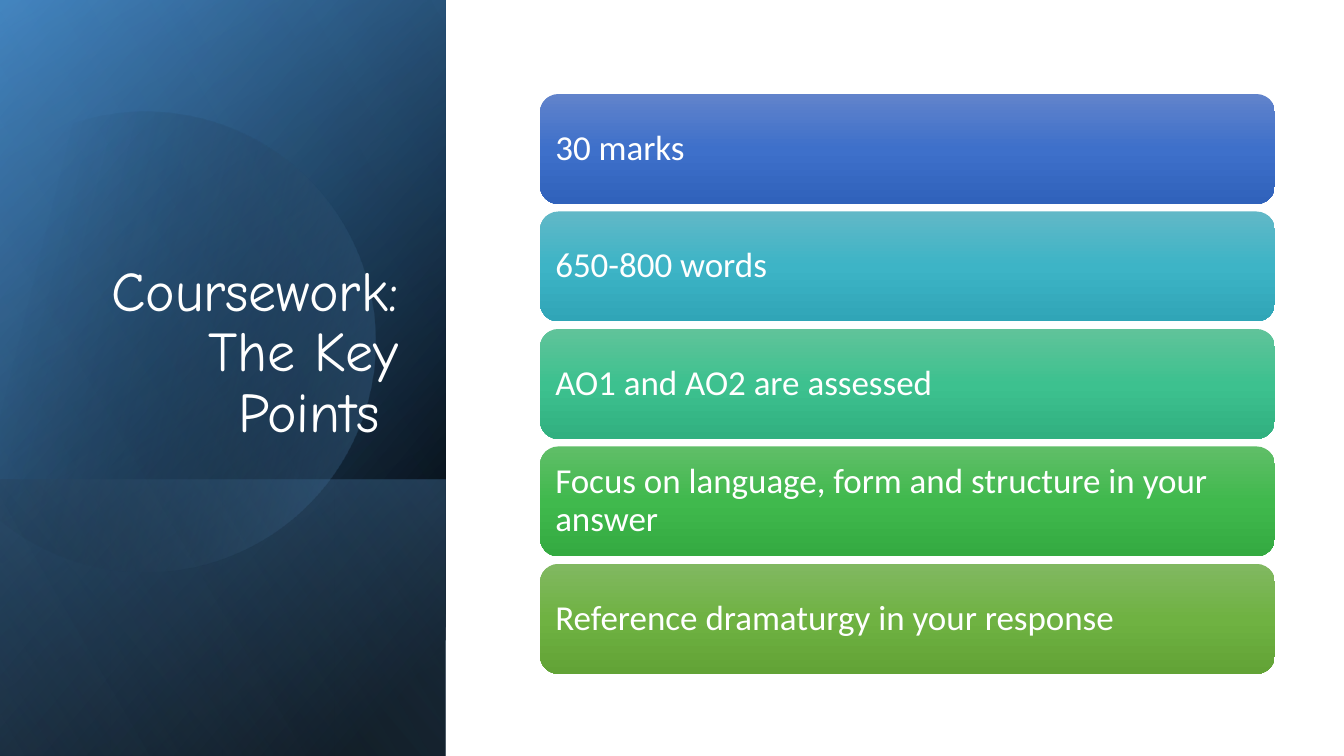
from dataclasses import dataclass
from math import cos, radians, sin

from lxml import etree
from pptx import Presentation
from pptx.dml.color import RGBColor
from pptx.enum.shapes import MSO_SHAPE
from pptx.enum.text import MSO_ANCHOR, PP_ALIGN
from pptx.oxml.ns import qn
from pptx.util import Cm, Pt

RECTANGLE = MSO_SHAPE.RECTANGLE
ROUNDED = MSO_SHAPE.ROUNDED_RECTANGLE
MIDDLE, BOTTOM = MSO_ANCHOR.MIDDLE, MSO_ANCHOR.BOTTOM
LEFT, RIGHT = PP_ALIGN.LEFT, PP_ALIGN.RIGHT


@dataclass(frozen=True)
class Theme:
    title_font: str = "Comic Neue"
    body_font: str = "Calibri"
    title_size: int = 40
    body_size: int = 25
    text: str = "FFFFFF"
    dark: str = "000000"
    deep_blue: str = "2E75B6"
    blue: str = "5B9BD5"
    pale_blue: str = "9DC3E6"
    bars: tuple = (
        ("6183CB", "3E70CA", "3062BB"),
        ("61B8C7", "3DB4C6", "30A5B7"),
        ("60C39A", "3DC18F", "31B080"),
        ("60BE68", "40B94D", "34AA41"),
        ("81B861", "6FB242", "62A336"),
    )


def write_text(shape, text, *, font, size, color, align, anchor):
    frame = shape.text_frame
    frame.word_wrap = True
    frame.vertical_anchor = anchor
    frame.margin_left = frame.margin_right = Cm(0.25)
    paragraph = frame.paragraphs[0]
    paragraph.alignment = align
    paragraph.line_spacing = 0.9
    run = paragraph.add_run()
    run.text = text
    run.font.name = font
    run.font.size = Pt(size)
    run.font.color.rgb = RGBColor.from_string(color)


class SlideBuilder:
    def __init__(self, slide, theme):
        self.slide = slide
        self.theme = theme

    def paint(self, shape, stops, angle):
        shape.shadow.inherit = False
        shape.line.fill.background()
        shape.fill.gradient()
        gradient = shape._element.spPr.find(qn("a:gradFill"))
        gradient.clear()
        gradient.set("rotWithShape", "1")
        stop_list = etree.SubElement(gradient, qn("a:gsLst"))
        for position, color, opacity in stops:
            stop = etree.SubElement(stop_list, qn("a:gs"), pos=str(position * 1000))
            tint = etree.SubElement(stop, qn("a:srgbClr"), val=color)
            if opacity < 100:
                etree.SubElement(tint, qn("a:alpha"), val=str(opacity * 1000))
        etree.SubElement(gradient, qn("a:lin"), ang=str(angle * 60000), scaled="0")

    def panel(self, left, top, width, height, stops, angle):
        shape = self.slide.shapes.add_shape(
            RECTANGLE, Cm(left), Cm(top), Cm(width), Cm(height))
        shape.rotation = 90
        shape._element.spPr.xfrm.set("flipH", "1")
        self.paint(shape, stops, angle)

    def clipped_circle(self, center_x, center_y, radius, start, end, rotation, stops, angle):
        points = [
            (Cm(center_x + radius * cos(radians(degree))),
             Cm(center_y + radius * sin(radians(degree))))
            for degree in range(start, end + 1, 3)
        ]
        builder = self.slide.shapes.build_freeform(*points[0])
        builder.add_line_segments(points[1:], close=True)
        shape = builder.convert_to_shape()
        shape.rotation = rotation
        self.paint(shape, stops, angle)

    def title(self, left, top, width, height, text):
        box = self.slide.shapes.add_textbox(Cm(left), Cm(top), Cm(width), Cm(height))
        write_text(box, text, font=self.theme.title_font, size=self.theme.title_size,
                   color=self.theme.text, align=RIGHT, anchor=BOTTOM)

    def bar(self, left, top, width, height, text, colors):
        shape = self.slide.shapes.add_shape(
            ROUNDED, Cm(left), Cm(top), Cm(width), Cm(height))
        stops = [(50 * index, color, 100) for index, color in enumerate(colors)]
        self.paint(shape, stops, 90)
        write_text(shape, text, font=self.theme.body_font, size=self.theme.body_size,
                   color=self.theme.text, align=LEFT, anchor=MIDDLE)


def main():
    theme = Theme()
    presentation = Presentation()
    presentation.slide_width = Cm(33.87)
    presentation.slide_height = Cm(19.05)
    slide = presentation.slides.add_slide(presentation.slide_layouts[6])
    builder = SlideBuilder(slide, theme)

    side = (-3.91, 3.91, 19.05, 11.23)
    builder.panel(*side, [(8, theme.dark, 100), (100, theme.deep_blue, 100)], 50)
    builder.panel(*side, [(0, theme.dark, 0), (99, theme.blue, 46)], 30)
    builder.panel(2.13, 9.96, 6.96, 11.23,
                  [(2, theme.blue, 29), (100, theme.dark, 30)], 130)
    builder.clipped_circle(3.65, 8.5, 5.8, -117, 150, 343.9,
                           [(29, theme.dark, 0), (100, theme.blue, 43)], 30)
    builder.panel(*side, [(0, theme.dark, 0), (99, theme.pale_blue, 11)], 120)
    builder.title(1.63, 4.67, 8.66, 6.65, "Coursework: The Key Points ")

    key_points = (
        "30 marks",
        "650-800 words",
        "AO1 and AO2 are assessed",
        "Focus on language, form and structure in your answer",
        "Reference dramaturgy in your response",
    )
    bar_top, bar_step = 2.37, 2.96
    for index, (text, colors) in enumerate(zip(key_points, theme.bars)):
        builder.bar(13.61, bar_top + index * bar_step, 18.52, 2.77, text, colors)

    presentation.save("out.pptx")


if __name__ == "__main__":
    main()
